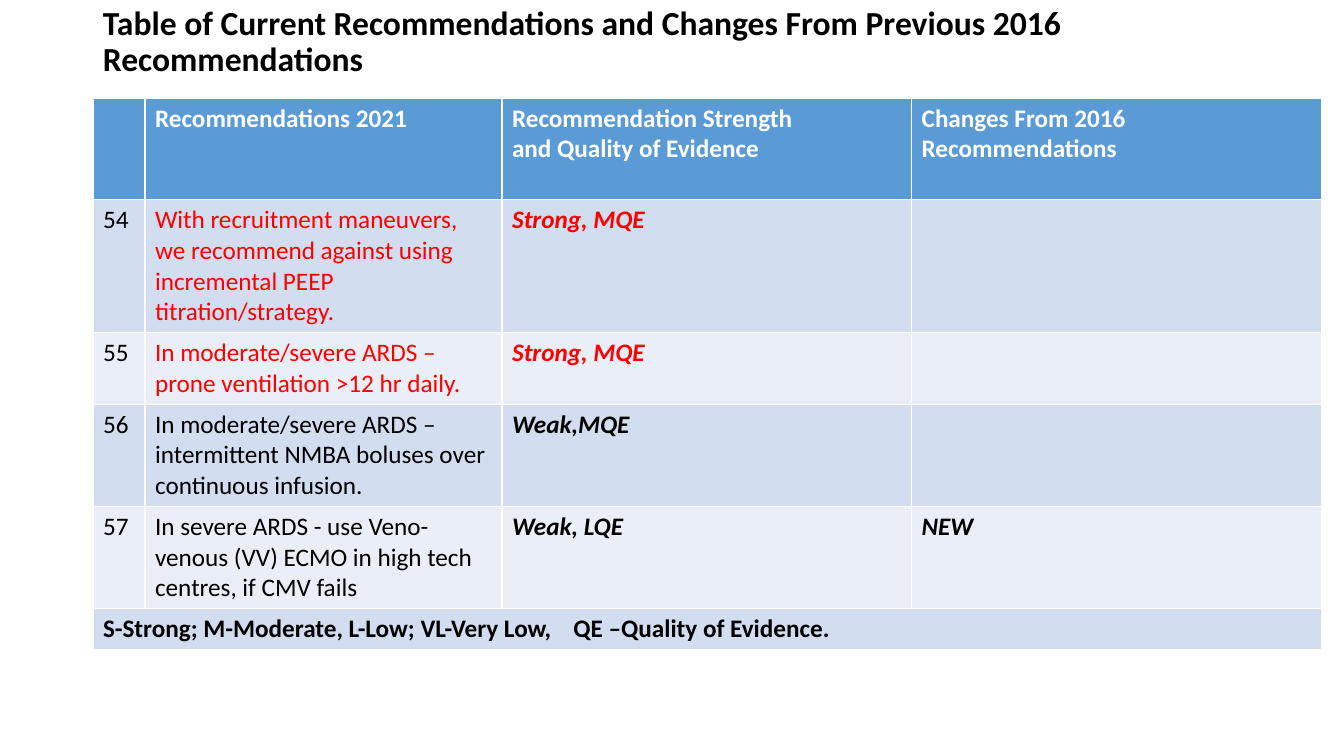
from pptx import Presentation
from pptx.dml.color import RGBColor
from pptx.enum.text import MSO_ANCHOR
from pptx.oxml import parse_xml
from pptx.oxml.ns import nsdecls
from pptx.util import Pt

FONT = "Calibri"
BLACK, WHITE, RED = "000000", "FFFFFF", "FF0000"
BLUE, DARK, LIGHT = "5B9BD5", "D2DEEF", "EAEFF7"
LEFT, WIDTH = 66.4, 877.4

TITLE = "Table of Current Recommendations and Changes From Previous 2016 Recommendations"
HEADS = ["", "Recommendations 2021",
         "Recommendation Strength\nand Quality of Evidence",
         "Changes From 2016 Recommendations"]
ROWS = [
    (RED, "54", "With recruitment maneuvers, we recommend against using "
     "incremental PEEP titration/strategy.", "Strong, MQE", ""),
    (RED, "55", "In moderate/severe ARDS – prone ventilation >12 hr daily.",
     "Strong, MQE", ""),
    (BLACK, "56", "In moderate/severe ARDS – intermittent NMBA boluses over "
     "continuous infusion.", "Weak,MQE", ""),
    (BLACK, "57", "In severe ARDS - use Veno-venous (VV) ECMO in high tech "
     "centres, if CMV fails", "Weak, LQE", "NEW"),
]
LEGEND = "S-Strong; M-Moderate, L-Low; VL-Very Low,\tQE –Quality of Evidence."
COLS = [37.2, 255, 292.6, 292.6]
HEIGHTS = [72.5, 95, 51.2, 73.1, 73.1, 29.2]


def paint(color, tint):
    color.rgb = RGBColor.from_string(tint)


def write(frame, text, tint, size=18, bold=False, italic=False):
    frame.text = text
    for para in frame.paragraphs:
        for run in para.runs:
            font = run.font
            font.name, font.size = FONT, Pt(size)
            font.bold, font.italic = bold, italic
            paint(font.color, tint)


def fill_cell(cell, text, back, tint, bold=False, italic=False):
    cell.fill.solid()
    paint(cell.fill.fore_color, back)
    write(cell.text_frame, text, tint, bold=bold, italic=italic)


def add_tab(para, stop):
    props = para._p.get_or_add_pPr()
    props.append(parse_xml(
        f'<a:tabLst {nsdecls("a")}><a:tab pos="{Pt(stop)}" algn="l"/></a:tabLst>'))


def add_title(slide):
    box = slide.shapes.add_textbox(Pt(LEFT), Pt(13), Pt(WIDTH), Pt(35.3))
    frame = box.text_frame
    frame.word_wrap = True
    frame.vertical_anchor = MSO_ANCHOR.MIDDLE
    write(frame, TITLE, BLACK, size=24, bold=True)
    frame.paragraphs[0].line_spacing = 0.9


def add_grid(slide):
    grid = slide.shapes.add_table(
        len(HEIGHTS), len(COLS), Pt(LEFT), Pt(70), Pt(WIDTH), Pt(sum(HEIGHTS))).table
    for col, width in zip(grid.columns, COLS):
        col.width = Pt(width)
    for row, height in zip(grid.rows, HEIGHTS):
        row.height = Pt(height)

    for col, head in enumerate(HEADS):
        fill_cell(grid.cell(0, col), head, BLUE, WHITE, bold=True)
    for row, (tint, *texts) in enumerate(ROWS, 1):
        back = DARK if row % 2 else LIGHT
        for col, text in enumerate(texts):
            graded = col > 1
            fill_cell(grid.cell(row, col), text, back, tint if col else BLACK,
                      bold=graded, italic=graded)

    last = len(HEIGHTS) - 1
    foot = grid.cell(last, 0)
    foot.merge(grid.cell(last, len(COLS) - 1))
    fill_cell(foot, LEGEND, DARK, BLACK, bold=True)
    add_tab(foot.text_frame.paragraphs[0], 336)


def main():
    deck = Presentation()
    deck.slide_width, deck.slide_height = Pt(960), Pt(540)
    slide = deck.slides.add_slide(deck.slide_layouts[6])
    add_title(slide)
    add_grid(slide)
    deck.save("out.pptx")


if __name__ == "__main__":
    main()
